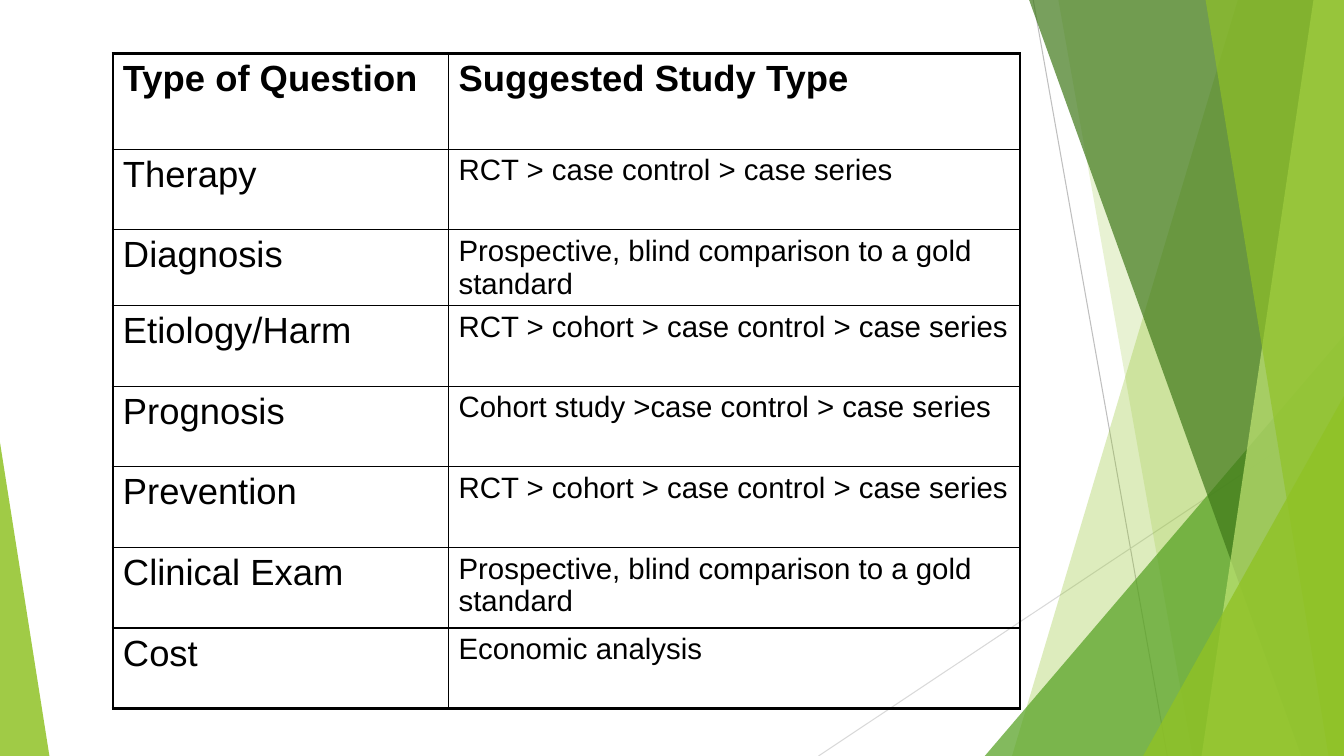
from dataclasses import dataclass

from lxml import etree
from pptx import Presentation
from pptx import util as u
from pptx.dml.color import RGBColor
from pptx.enum import shapes
from pptx.oxml.ns import qn


@dataclass(frozen=True)
class Theme:
    font: str = "Arial"
    ink: str = "000000"
    lime: str = "90C226"
    pale: str = "C0E474"
    green: str = "54A021"
    forest: str = "3F7819"
    gray: str = "BFBFBF"
    light_gray: str = "D9D9D9"
    label_size: int = 26
    study_size: int = 21
    hairline: float = 0.75
    inner: float = 1
    outer: float = 2.25


THEME = Theme()
W, H = u.Inches(13.333), u.Inches(7.5)
TABLE_LEFT, TABLE_TOP, TABLE_WIDTH = u.Inches(1.12), u.Inches(0.53), u.Inches(9)
COLUMN_SHARES = (0.37, 0.63)
HEADER_HEIGHT, ROW_HEIGHT, TIGHT_HEIGHT = 0.95, 0.8, 0.74
TIGHT_ROW = 2

ROWS = [
    ("Type of Question", "Suggested Study Type"),
    ("Therapy", "RCT > case control > case series"),
    ("Diagnosis", "Prospective, blind comparison to a gold standard"),
    ("Etiology/Harm", "RCT > cohort > case control > case series"),
    ("Prognosis", "Cohort study >case control > case series"),
    ("Prevention", "RCT > cohort > case control > case series"),
    ("Clinical Exam", "Prospective, blind comparison to a gold standard"),
    ("Cost", "Economic analysis"),
]


def paint(sp, color, opacity):
    """Fill a shape without outline; opacity is a percentage."""
    sp.shadow.inherit = False
    sp.line.fill.background()
    sp.fill.solid()
    sp.fill.fore_color.rgb = RGBColor.from_string(color)
    clr = sp.fill._xPr.find(".//" + qn("a:srgbClr"))
    etree.SubElement(clr, qn("a:alpha"), val=str(opacity * 1000))


def add_line(s, start, end, color):
    line = s.shapes.add_connector(
        shapes.MSO_CONNECTOR.STRAIGHT, *(u.Inches(v) for v in start + end))
    line.line.color.rgb = RGBColor.from_string(color)
    line.line.width = u.Pt(THEME.hairline)
    etree.SubElement(line._element.spPr, qn("a:effectLst"))


def add_shard(s, top_x, bottom_x, color, opacity):
    """Full-height band from a slanted left edge to the slide's right edge."""
    builder = s.shapes.build_freeform(u.Inches(top_x), 0)
    builder.add_line_segments([(W, 0), (W, H), (u.Inches(bottom_x), H)], close=True)
    paint(builder.convert_to_shape(), color, opacity)


def add_corner(s, left, top, right, apex, color, opacity):
    """Triangle standing on the slide's bottom; apex 0 is left, 1 is right."""
    x, y = u.Inches(left), u.Inches(top)
    sp = s.shapes.add_shape(shapes.MSO_SHAPE.ISOSCELES_TRIANGLE,
                            x, y, u.Inches(right) - x, H - y)
    sp.adjustments[0] = apex
    paint(sp, color, opacity)


def add_backdrop(s):
    t = THEME
    right = W / u.Inches(1)
    add_line(s, (10.25, 0), (11.58, 7.5), t.gray)
    add_line(s, (right, 4.03), (8.12, 7.5), t.light_gray)
    add_shard(s, 12.28, 10.04, t.lime, 30)
    add_shard(s, 10.5, 11.83, t.lime, 20)
    add_corner(s, 9.77, 3.33, right, 1, t.green, 72)
    add_shard(s, 10.21, 12.91, t.forest, 70)
    add_shard(s, 13.03, 11.92, t.pale, 70)
    add_shard(s, 11.96, 13.18, t.lime, 65)
    add_corner(s, 11.34, 3.93, right, 1, t.lime, 80)
    add_corner(s, 0, 4.39, 0.49, 0, t.lime, 85)


def set_borders(cell, outer_sides):
    props = cell._tc.get_or_add_tcPr()
    for i, side in enumerate("LRTB"):
        width = THEME.outer if side in outer_sides else THEME.inner
        ln = etree.Element(qn("a:ln" + side), w=str(u.Pt(width)))
        fill = etree.SubElement(ln, qn("a:solidFill"))
        etree.SubElement(fill, qn("a:srgbClr"), val=THEME.ink)
        props.insert(i, ln)


def write_cell(cell, content, size, bold):
    cell.fill.background()
    r = cell.text_frame.paragraphs[0].add_run()
    r.text = content
    r.font.name = THEME.font
    r.font.size = u.Pt(size)
    r.font.bold = bold
    r.font.color.rgb = RGBColor.from_string(THEME.ink)


def add_study_table(s):
    heights = [HEADER_HEIGHT] + [ROW_HEIGHT] * (len(ROWS) - 1)
    heights[TIGHT_ROW] = TIGHT_HEIGHT
    table = s.shapes.add_table(len(ROWS), 2, TABLE_LEFT, TABLE_TOP, TABLE_WIDTH,
                               u.Inches(sum(heights))).table
    table.first_row = True
    table.horz_banding = False
    for column, share in zip(table.columns, COLUMN_SHARES):
        column.width = int(TABLE_WIDTH * share)
    for i, (row, height) in enumerate(zip(ROWS, heights)):
        table.rows[i].height = u.Inches(height)
        for j, content in enumerate(row):
            header = i == 0
            size = THEME.label_size if header or j == 0 else THEME.study_size
            write_cell(table.cell(i, j), content, size, header)
            sides = "LR"[j] + ("T" if header else "")
            sides += "B" if i == len(ROWS) - 1 else ""
            set_borders(table.cell(i, j), sides)


def main():
    prs = Presentation()
    prs.slide_width, prs.slide_height = W, H
    s = prs.slides.add_slide(prs.slide_layouts[6])
    add_backdrop(s)
    add_study_table(s)
    prs.save("out.pptx")


if __name__ == "__main__":
    main()
